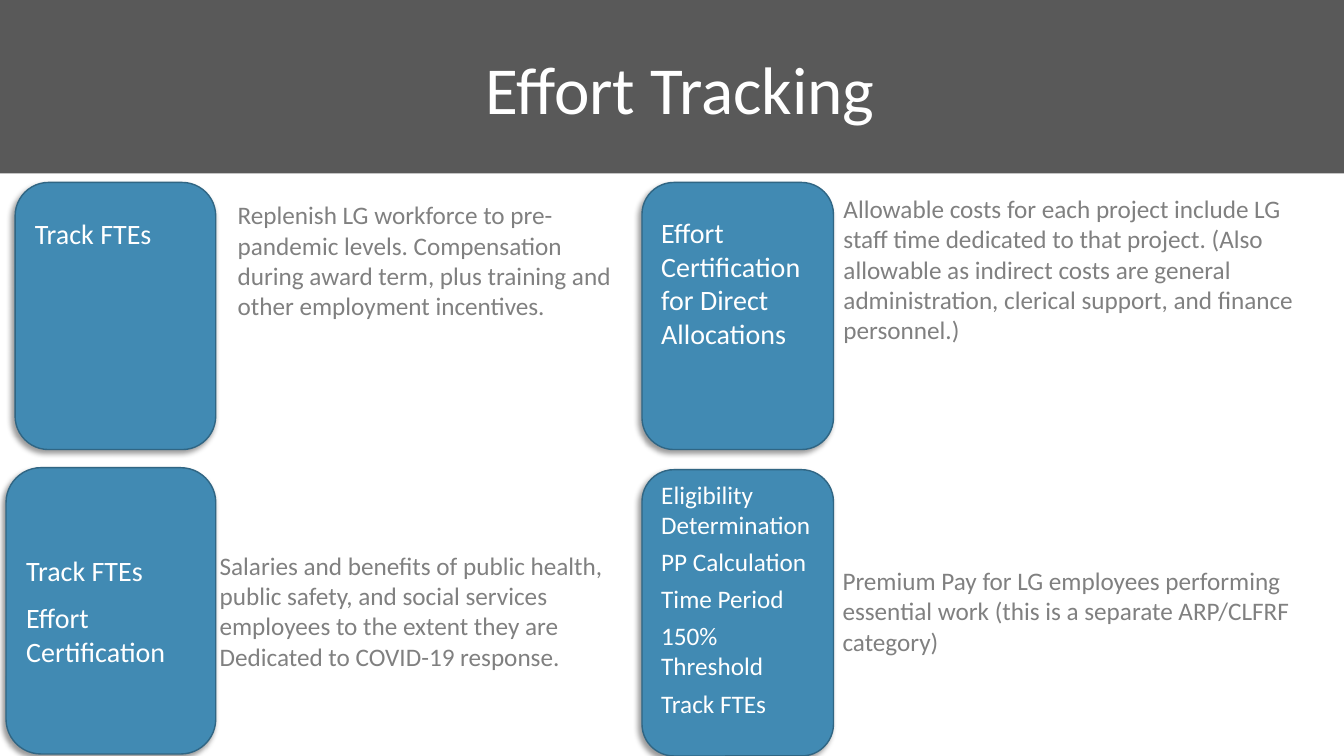
from lxml.etree import SubElement
from pptx import Presentation
from pptx.dml.color import RGBColor
from pptx.enum.shapes import MSO_SHAPE
from pptx.enum.text import MSO_ANCHOR, PP_ALIGN
from pptx.oxml.ns import qn
from pptx.util import Pt

FONT = "Calibri"
WHITE, GREY, BANNER = "FFFFFF", "808080", "595959"
CARD_FILL, CARD_LINE = "418AB3", "306684"

CARDS = [
    ((10.8, 130.3, 143.3, 190.8), ["Track FTEs"], 20, 0, MSO_ANCHOR.TOP, 17),
    ((4.3, 334.1, 149.8, 204.5), ["Track FTEs", "Effort Certification"],
     20, 9.8, MSO_ANCHOR.MIDDLE, 3.6),
    ((458.6, 130.3, 136.8, 190.8), ["Effort Certification for Direct Allocations"],
     20, 0, MSO_ANCHOR.TOP, 17),
    ((458.6, 335.5, 136.8, 204.5),
     ["Eligibility Determination", "PP Calculation", "Time Period",
      "150% Threshold", "Track FTEs"], 18, 4.9, MSO_ANCHOR.TOP, 0),
]

DESCRIPTIONS = [
    ((162.7, 139, 284.4, 94.3),
     "Replenish LG workforce to pre-pandemic levels. Compensation during award "
     "term, plus training and other employment incentives."),
    ((149.8, 389.5, 326.9, 94.3),
     "Salaries and benefits of public health, public safety, and social services "
     "employees to the extent they are Dedicated to COVID-19 response."),
    ((595.4, 134.6, 353.5, 116.6),
     "Allowable costs for each project include LG staff time dedicated to that "
     "project. (Also allowable as indirect costs are general administration, "
     "clerical support, and finance personnel.)"),
    ((594.7, 400.3, 353.5, 72.7),
     "Premium Pay for LG employees performing essential work (this is a separate "
     "ARP/CLFRF category)"),
]


def color(value):
    """Turn a hex string into a colour."""
    return RGBColor.from_string(value)


def write(shape, lines, size, text_color, align=PP_ALIGN.LEFT,
          anchor=MSO_ANCHOR.TOP, gap=0):
    """Fill a shape with one paragraph per line."""
    frame = shape.text_frame
    frame.word_wrap = True
    frame.vertical_anchor = anchor
    for index, line in enumerate(lines):
        paragraph = frame.add_paragraph() if index else frame.paragraphs[0]
        paragraph.alignment = align
        if index:
            paragraph.space_before = Pt(gap)
        run = paragraph.add_run()
        run.text = line
        run.font.name = FONT
        run.font.size = Pt(size)
        run.font.color.rgb = color(text_color)


def add_text(slide, box, text, size, text_color, **layout):
    """Add a wrapped text box."""
    shape = slide.shapes.add_textbox(*map(Pt, box))
    write(shape, [text], size, text_color, **layout)


def add_block(slide, kind, box, fill):
    """Add a filled shape without line or shadow."""
    shape = slide.shapes.add_shape(kind, *map(Pt, box))
    shape.shadow.inherit = False
    shape.fill.solid()
    shape.fill.fore_color.rgb = color(fill)
    shape.line.fill.background()
    return shape


def add_shadow(shape):
    """Give a shape a soft shadow to the lower left."""
    effects = shape._element.spPr.find(qn("a:effectLst"))
    shadow = SubElement(effects, qn("a:outerShdw"), blurRad=str(Pt(4)),
                        dist=str(Pt(3)), dir=str(135 * 60000), rotWithShape="0")
    shade = SubElement(shadow, qn("a:srgbClr"), val="000000")
    SubElement(shade, qn("a:alpha"), val="40000")


def add_card(slide, box, lines, size, gap, anchor, top_inset):
    """Add a rounded blue card with its label."""
    card = add_block(slide, MSO_SHAPE.ROUNDED_RECTANGLE, box, CARD_FILL)
    card.line.color.rgb = color(CARD_LINE)
    card.line.width = Pt(1)
    add_shadow(card)
    card.text_frame.margin_top = Pt(top_inset)
    write(card, lines, size, WHITE, anchor=anchor, gap=gap)


def main():
    """Build the slide and save it."""
    presentation = Presentation()
    presentation.slide_width, presentation.slide_height = Pt(960), Pt(540)
    slide = presentation.slides.add_slide(presentation.slide_layouts[6])
    for box, text in DESCRIPTIONS:
        add_text(slide, box, text, 18, GREY)
    add_block(slide, MSO_SHAPE.RECTANGLE, (0, 0, 960, 123.8), BANNER)
    add_text(slide, (66.2, 31, 839.5, 62.6), "Effort Tracking", 48, WHITE,
             align=PP_ALIGN.CENTER, anchor=MSO_ANCHOR.MIDDLE)
    for card in CARDS:
        add_card(slide, *card)
    presentation.save("out.pptx")


if __name__ == "__main__":
    main()
